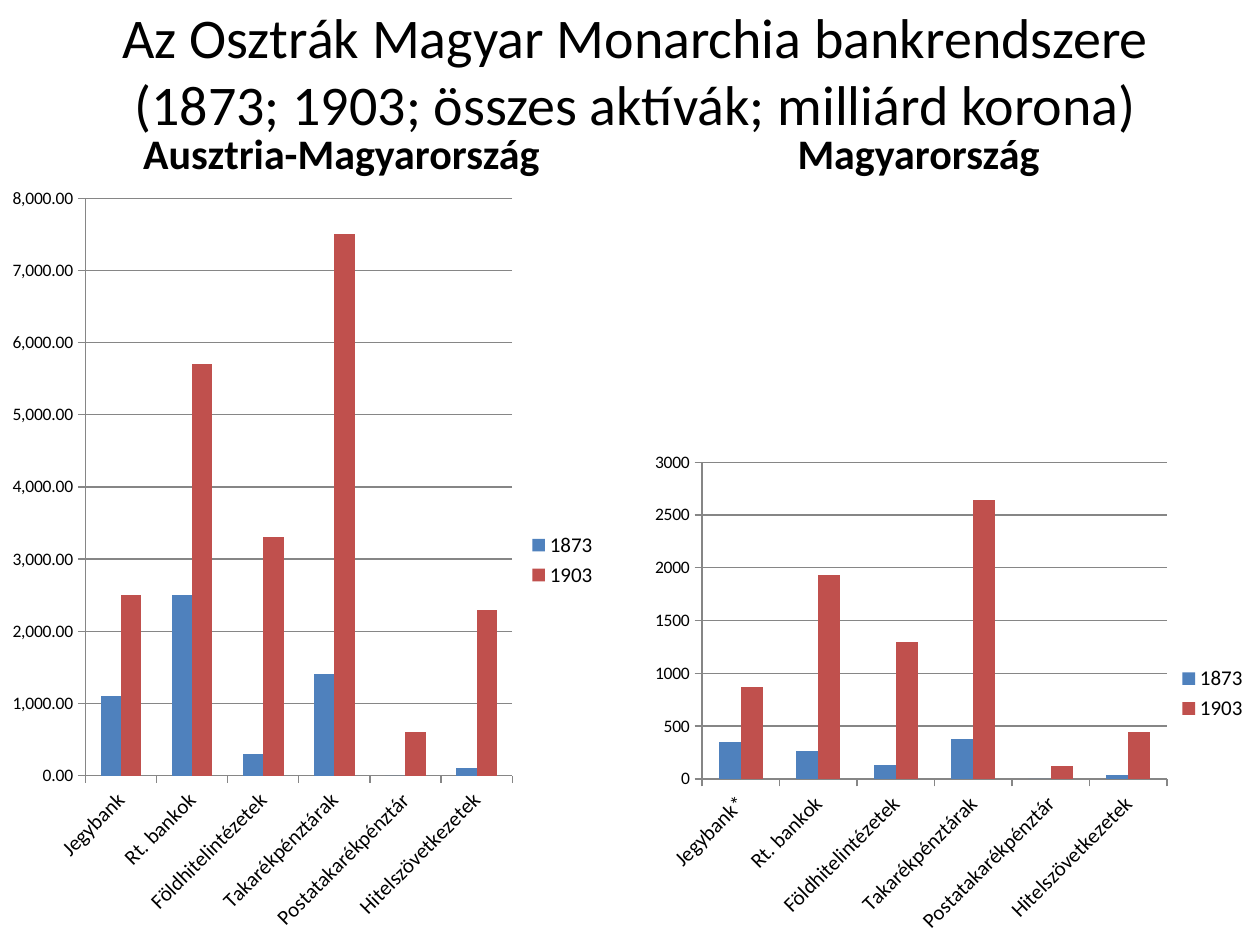
from dataclasses import dataclass

from pptx import Presentation
from pptx.chart.data import CategoryChartData
from pptx.dml.color import RGBColor
from pptx.enum.chart import XL_CHART_TYPE as ChartType
from pptx.enum.chart import XL_LEGEND_POSITION as LegendPosition
from pptx.enum.chart import XL_TICK_MARK as TickMark
from pptx.enum.text import MSO_ANCHOR as Anchor
from pptx.enum.text import MSO_AUTO_SIZE as AutoSize
from pptx.enum.text import PP_ALIGN as Align
from pptx.oxml import parse_xml
from pptx.oxml.ns import nsdecls
from pptx.util import Inches, Pt


@dataclass(frozen=True)
class Theme:
    font: str = "Calibri"
    text: RGBColor = RGBColor(0, 0, 0)
    grid: RGBColor = RGBColor(0x86, 0x86, 0x86)
    series: tuple = (RGBColor(0x4F, 0x81, 0xBD), RGBColor(0xC0, 0x50, 0x4D))
    title_size: int = 32
    heading_size: int = 24
    label_size: int = 12
    value_size: int = 10


@dataclass(frozen=True)
class Box:
    left: float
    top: float
    width: float
    height: float

    def emu(self):
        return [Inches(n) for n in (self.left, self.top, self.width, self.height)]


THEME = Theme()
WIDTH, HEIGHT = 10, 7.5
RIGHT_COLUMN = 5.08
YEARS = ("1873", "1903")
INSTITUTIONS = ("Rt. bankok", "Földhitelintézetek", "Takarékpénztárak",
                "Postatakarékpénztár", "Hitelszövetkezetek")


def style_font(font, size, bold=False):
    font.name = THEME.font
    font.size = Pt(size)
    font.bold = bold
    font.color.rgb = THEME.text


def write_lines(frame, lines, size, anchor, bold=False):
    frame.word_wrap = True
    frame.auto_size = AutoSize.NONE
    frame.vertical_anchor = anchor
    para = frame.paragraphs[0]
    para.alignment = Align.CENTER
    for index, line in enumerate(lines):
        if index:
            para.add_line_break()
        span = para.add_run()
        span.text = line
        style_font(span.font, size, bold)


def place_title(page, box, lines):
    title = page.shapes.title
    title.left, title.top, title.width, title.height = box.emu()
    write_lines(title.text_frame, lines, THEME.title_size, Anchor.MIDDLE)


def place_heading(page, box, text):
    heading = page.shapes.add_textbox(*box.emu())
    write_lines(heading.text_frame, [text], THEME.heading_size, Anchor.BOTTOM, bold=True)


def fix_plot_area(chart, plot_box):
    """Pin the inner plot area to shares of the chart's size."""
    plot_area = chart.plots[0]._element.getparent()
    for old in plot_area.findall("{*}layout"):
        plot_area.remove(old)
    places = "".join(f'<c:{tag} val="{share}"/>' for tag, share in (
        ("x", plot_box.left), ("y", plot_box.top),
        ("w", plot_box.width), ("h", plot_box.height)))
    plot_area.insert(0, parse_xml(
        f'<c:layout {nsdecls("c")}><c:manualLayout><c:layoutTarget val="inner"/>'
        f'<c:xMode val="edge"/><c:yMode val="edge"/>{places}'
        '</c:manualLayout></c:layout>'))


def place_chart(page, box, plot_box, bank, values, top_value, step, number_format):
    data = CategoryChartData()
    data.categories = (bank, *INSTITUTIONS)
    for year, amounts in zip(YEARS, values):
        data.add_series(year, amounts)
    chart = page.shapes.add_chart(ChartType.COLUMN_CLUSTERED, *box.emu(), data).chart
    chart.has_title = False
    style_font(chart.font, THEME.value_size)
    fix_plot_area(chart, plot_box)

    # Columns
    plot = chart.plots[0]
    plot.vary_by_categories = False
    plot.gap_width, plot.overlap = 150, 0
    for series, color in zip(plot.series, THEME.series):
        series.format.fill.solid()
        series.format.fill.fore_color.rgb = color

    # Axes, with slanted category names
    category_axis, value_axis = chart.category_axis, chart.value_axis
    style_font(category_axis.tick_labels.font, THEME.label_size)
    category_axis._element.txPr.bodyPr.set("rot", "-2700000")
    value_axis.minimum_scale, value_axis.maximum_scale = 0, top_value
    value_axis.major_unit = step
    value_axis.tick_labels.number_format = number_format
    value_axis.tick_labels.number_format_is_linked = False
    value_axis.has_major_gridlines = True
    for axis in (category_axis, value_axis):
        axis.major_tick_mark = TickMark.OUTSIDE
    for part in (category_axis, value_axis, value_axis.major_gridlines):
        part.format.line.color.rgb = THEME.grid
        part.format.line.width = Pt(0.75)

    # Legend
    chart.has_legend = True
    chart.legend.position = LegendPosition.RIGHT
    chart.legend.include_in_layout = False
    style_font(chart.legend.font, THEME.label_size)


def main():
    deck = Presentation()
    deck.slide_width, deck.slide_height = Inches(WIDTH), Inches(HEIGHT)
    page = deck.slides.add_slide(deck.slide_layouts[5])

    place_title(page, Box(0.28, 0.05, 9.53, 1.01),
                ("Az Osztrák Magyar Monarchia bankrendszere",
                 "(1873; 1903; összes aktívák; milliárd korona)"))

    # Column headings
    for left, text in ((0.5, "Ausztria-Magyarország"), (RIGHT_COLUMN, "Magyarország")):
        place_heading(page, Box(left, 0.99, 4.42, 0.47), text)

    # Charts stand on the bottom edge of the slide
    place_chart(page, Box(0, 1.39, 4.84, HEIGHT - 1.39), Box(0.14, 0.03, 0.7, 0.75),
                "Jegybank",
                ((1100, 2500, 300, 1400, 0, 100), (2500, 5700, 3300, 7500, 600, 2300)),
                8000, 1000, "#,##0.00")
    place_chart(page, Box(RIGHT_COLUMN, 3.51, WIDTH - RIGHT_COLUMN, HEIGHT - 3.51),
                Box(0.1, 0.04, 0.75, 0.63), "Jegybank*",
                ((350, 260, 130, 380, 0, 40), (870, 1930, 1300, 2640, 120, 440)),
                3000, 500, "General")

    deck.save("out.pptx")


if __name__ == "__main__":
    main()
